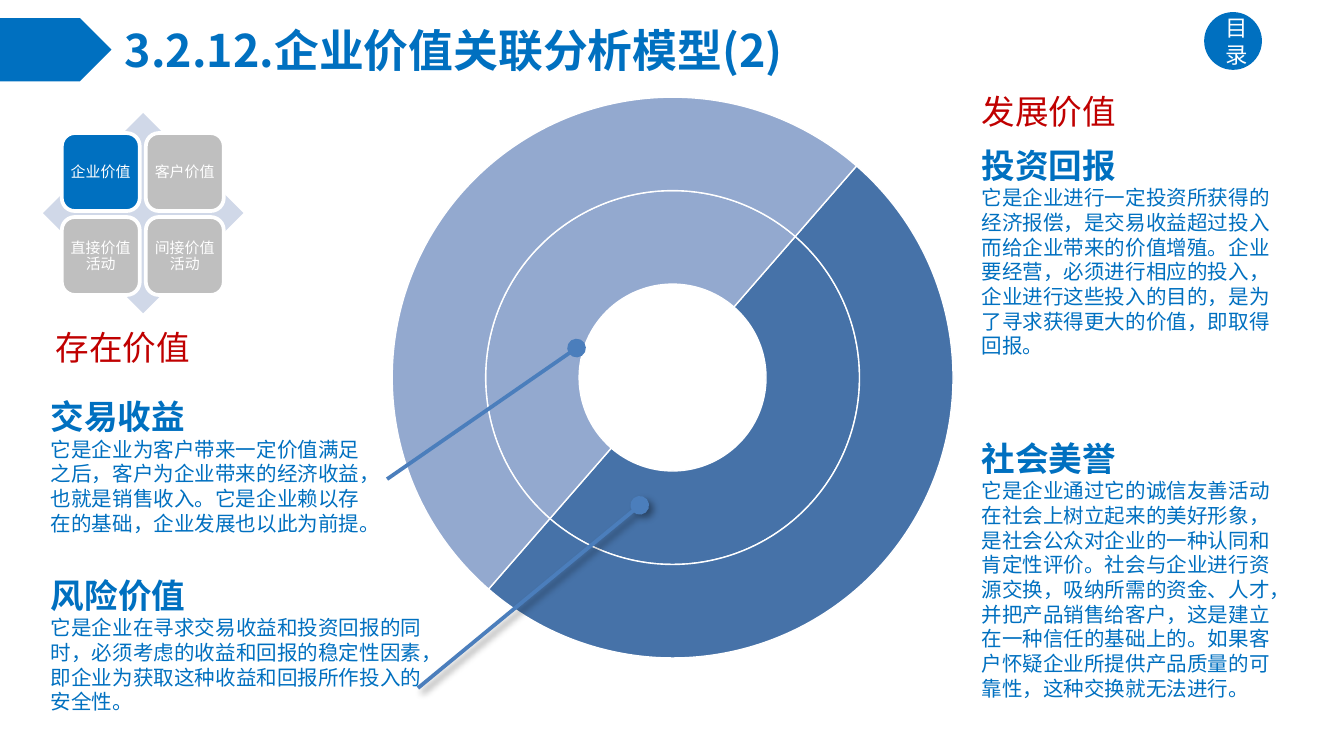
import lxml.etree
import pptx
import pptx.chart.data
import pptx.dml.color
import pptx.enum.chart
import pptx.enum.shapes
import pptx.enum.text
import pptx.oxml
import pptx.oxml.ns
import pptx.util

BLUE, RED, GREY, WHITE = "0070C0", "C00000", "BFBFBF", "FFFFFF"
FONT = "Noto Sans CJK SC"
hue = pptx.dml.color.RGBColor.from_string
qn = pptx.oxml.ns.qn
kinds = pptx.enum.shapes.MSO_SHAPE
align = pptx.enum.text.PP_ALIGN

deck = pptx.Presentation()
deck.slide_width = pptx.util.Inches(10)
deck.slide_height = deck.slide_width * 9 // 16
column = row = deck.slide_width / 100
slide = deck.slides.add_slide(deck.slide_layouts[5])
shapes = slide.shapes


def grid(left, top, wide, high):
    return [int(left * column), int(top * row), int(wide * column), int(high * row)]


def write(frame, lines, color, alignment=align.LEFT, leading=1.2):
    frame.word_wrap = True
    frame.text = "\n".join(text for text, size, bold in lines)
    for paragraph, (text, size, bold) in zip(frame.paragraphs, lines):
        paragraph.alignment = alignment
        paragraph.line_spacing = pptx.util.Pt(round(size * leading, 1))
        font = paragraph.runs[0].font
        font.name, font.size, font.bold = FONT, pptx.util.Pt(size), bold
        font.color.rgb = hue(color)
        east_asian = lxml.etree.SubElement(font._element, qn("a:ea"))
        east_asian.set("typeface", FONT)


heading = shapes.title
heading.left, heading.top, heading.width, heading.height = grid(8.3, 0.6, 86.7, 6.2)
heading.text_frame.vertical_anchor = pptx.enum.text.MSO_ANCHOR.MIDDLE
write(heading.text_frame, [("3.2.12.企业价值关联分析模型(2)", 24, True)], BLUE)

solids = [
    (kinds.PENTAGON, (0, 1.35, 8.3, 4.7), BLUE, ""),
    (kinds.DIAMOND, (3.2, 8.4, 14.9, 14.9), "D0D8E8", ""),
    (kinds.OVAL, (89.6, 0.9, 4.3, 4.3), BLUE, "目录"),
]
for kind, cells, color, text in solids:
    solid = shapes.add_shape(kind, *grid(*cells))
    solid.shadow.inherit = False
    solid.fill.solid()
    solid.fill.fore_color.rgb = hue(color)
    solid.line.fill.background()
    if text:
        write(solid.text_frame, [(text, 12, False)], WHITE, align.CENTER)

for index, text in enumerate(["企业价值", "客户价值", "直接价值活动", "间接价值活动"]):
    down, across = divmod(index, 2)
    value = shapes.add_shape(
        kinds.ROUNDED_RECTANGLE, *grid(4.6 + 6.25 * across, 9.9 + 6.25 * down, 5.8, 5.8))
    value.shadow.inherit = False
    value.fill.solid()
    value.fill.fore_color.rgb = hue(GREY if index else BLUE)
    value.line.color.rgb = hue(WHITE)
    value.line.width = pptx.util.Pt(2)
    frame = value.text_frame
    frame.margin_left = frame.margin_right = int(0.2 * column)
    frame.margin_top = frame.margin_bottom = int(0.2 * row)
    write(frame, [(text, 8, False)], WHITE, align.CENTER, 1.08)

shares = pptx.chart.data.CategoryChartData()
shares.categories = ["1", "2"]
shares.add_series("Series 1", (50, 50))
shares.add_series("Series 2", (50, 50))
rings = shapes.add_chart(
    pptx.enum.chart.XL_CHART_TYPE.DOUGHNUT, *grid(16.7, 5.9, 66.7, 44.4), shares).chart
rings.has_legend = rings.has_title = False
rings.font.name, rings.font.size = "Calibri", pptx.util.Pt(18)
rings.font.color.rgb = hue("000000")
rings.plots[0].vary_by_categories = True
for ring in rings.plots[0].series:
    for half, color in enumerate(["4672A8", "93A9CF"]):
        style = ring.points[half].format
        style.fill.solid()
        style.fill.fore_color.rgb = hue(color)
        style.line.color.rgb = hue(WHITE)
        style.line.width = pptx.util.Pt(0.75)
doughnut = rings.plots[0]._element
doughnut.find(qn("c:firstSliceAng")).set("val", "41")
doughnut.find(qn("c:holeSize")).set("val", "27")
plot_area = doughnut.getparent()
for old in plot_area.findall(qn("c:layout")):
    plot_area.remove(old)
layout = lxml.etree.Element(qn("c:layout"))
manual = lxml.etree.SubElement(layout, qn("c:manualLayout"))
for tag, setting in [("layoutTarget", "inner"), ("xMode", "edge"), ("yMode", "edge"),
                     ("x", "0.18"), ("y", "0.03"), ("w", "0.64"), ("h", "0.94")]:
    lxml.etree.SubElement(manual, qn("c:" + tag)).set("val", setting)
plot_area.insert(0, layout)

passages = [
    ((2.8, 42.3, 29.9, 11.4), "风险价值",
     "它是企业在寻求交易收益和投资回报的同时，必须考虑的收益和回报的稳定性因素，即企业为获取这种收益和回报所作投入的安全性。"),
    ((72.05, 10.3, 24.6, 17), "投资回报",
     "它是企业进行一定投资所获得的经济报偿，是交易收益超过投入而给企业带来的价值增殖。企业要经营，必须进行相应的投入，企业进行这些投入的目的，是为了寻求获得更大的价值，即取得回报。"),
    ((72.05, 32.1, 23.6, 22.6), "社会美誉",
     "它是企业通过它的诚信友善活动在社会上树立起来的美好形象，是社会公众对企业的一种认同和肯定性评价。社会与企业进行资源交换，吸纳所需的资金、人才，并把产品销售给客户，这是建立在一种信任的基础上的。如果客户怀疑企业所提供产品质量的可靠性，这种交换就无法进行。"),
    ((2.8, 29, 26, 13.3), "交易收益",
     "它是企业为客户带来一定价值满足之后，客户为企业带来的经济收益，也就是销售收入。它是企业赖以存在的基础，企业发展也以此为前提。"),
]
for cells, topic, detail in passages:
    passage = shapes.add_textbox(*grid(*cells))
    write(passage.text_frame, [(topic, 18, True), (detail, 11, False)], BLUE)
income = passage

for cells, text in [((3.15, 23.85, 12.6, 4), "存在价值"), ((72.05, 6.3, 12.6, 4), "发展价值")]:
    write(shapes.add_textbox(*grid(*cells)).text_frame, [(text, 18, False)], RED)

effects = []
for ends in [(28.8, 35.65, 42.9, 25.9), (31.1, 51.2, 47.6, 37.6)]:
    pointer = shapes.add_connector(pptx.enum.shapes.MSO_CONNECTOR.STRAIGHT, *grid(*ends))
    pointer.line.color.rgb = hue("4B7EBC")
    pointer.line.width = pptx.util.Pt(2)
    lxml.etree.SubElement(pointer.line._ln, qn("a:tailEnd"), type="oval", w="lg", len="lg")
    effects.append(lxml.etree.SubElement(pointer._element.spPr, qn("a:effectLst")))
    if len(effects) == 1:
        pointer.begin_connect(income, 3)
shade = lxml.etree.SubElement(effects[1], qn("a:outerShdw"), blurRad="50800",
                              dist="38100", dir="2700000", algn="tl", rotWithShape="0")
black = lxml.etree.SubElement(shade, qn("a:srgbClr"), val="000000")
lxml.etree.SubElement(black, qn("a:alpha"), val="40000")

deck.save("out.pptx")
